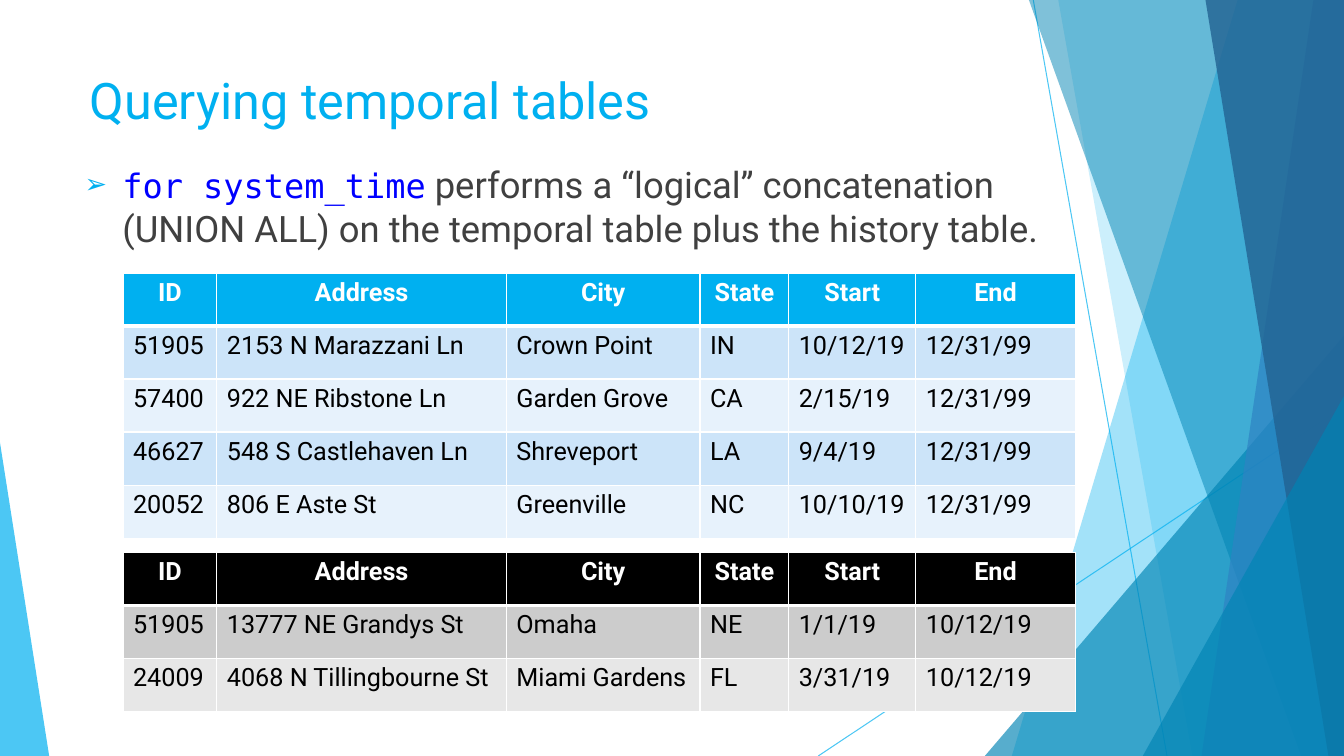
import lxml.etree
import pptx
import pptx.dml.color
import pptx.enum.shapes
import pptx.enum.text
import pptx.oxml
import pptx.oxml.ns
import pptx.util
from pptx.util import Cm

RGBColor = pptx.dml.color.RGBColor
SKY = RGBColor(0x00, 0xB0, 0xF0)
OCEAN = RGBColor(0x00, 0x84, 0xB4)
STEEL = RGBColor(0x2E, 0x83, 0xC3)
NAVY = RGBColor(0x22, 0x62, 0x92)
CODE_BLUE = RGBColor(0x00, 0x00, 0xFF)
BODY_GRAY = RGBColor(0x40, 0x40, 0x40)
WHITE = RGBColor(0xFF, 0xFF, 0xFF)
BLACK = RGBColor(0x00, 0x00, 0x00)
BLUE_BANDS = (RGBColor(0xCC, 0xE4, 0xF9), RGBColor(0xE7, 0xF2, 0xFC))
GRAY_BANDS = (RGBColor(0xCC, 0xCC, 0xCC), RGBColor(0xE7, 0xE7, 0xE7))

TEXT_FONT = "Roboto"
CODE_FONT = "DejaVu Sans Mono"
SLIDE_WIDTH, SLIDE_HEIGHT = 33.87, 19.05  # cm

HEADINGS = ("ID", "Address", "City", "State", "Start", "End")
COLUMN_SHARES = (0.93, 2.87, 1.92, 0.88, 1.26, 1.58)
CURRENT_ROWS = (
    ("51905", "2153 N Marazzani Ln", "Crown Point", "IN", "10/12/19", "12/31/99"),
    ("57400", "922 NE Ribstone Ln", "Garden Grove", "CA", "2/15/19", "12/31/99"),
    ("46627", "548 S Castlehaven Ln", "Shreveport", "LA", "9/4/19", "12/31/99"),
    ("20052", "806 E Aste St", "Greenville", "NC", "10/10/19", "12/31/99"),
)
HISTORY_ROWS = (
    ("51905", "13777 NE Grandys St", "Omaha", "NE", "1/1/19", "10/12/19"),
    ("24009", "4068 N Tillingbourne St", "Miami Gardens", "FL", "3/31/19", "10/12/19"),
)


def add_xml(parent, tag, **attributes):
    child = lxml.etree.SubElement(parent, pptx.oxml.ns.qn(tag))
    for key, value in attributes.items():
        child.set(key, str(value))
    return child


def set_opacity(color_format, percent):
    color = color_format._xFill.find(pptx.oxml.ns.qn("a:srgbClr"))
    add_xml(color, "a:alpha", val=percent * 1000)


def style_facet(facet, color, opacity):
    facet.shadow.inherit = False
    facet.fill.solid()
    facet.fill.fore_color.rgb = color
    set_opacity(facet.fill.fore_color, opacity)
    facet.line.fill.background()


def add_backdrop(slide, left, top, width, height):
    right, bottom = left + width, top + height

    def add_ray(start_x, start_y, end_x, end_y):
        ray = slide.shapes.add_connector(
            pptx.enum.shapes.MSO_CONNECTOR.STRAIGHT,
            Cm(start_x), Cm(start_y), Cm(end_x), Cm(end_y))
        ray.line.color.rgb = SKY
        ray.line.width = pptx.util.Pt(0.75)
        set_opacity(ray.line.fill.fore_color, 70)
        add_xml(ray.element.spPr, "a:effectLst")

    # Panel running from a slanted left edge to the right side
    def add_panel(top_x, bottom_x, color, opacity):
        outline = slide.shapes.build_freeform(Cm(left + top_x), Cm(top))
        outline.add_line_segments([
            (Cm(right), Cm(top)), (Cm(right), Cm(bottom)),
            (Cm(left + bottom_x), Cm(bottom))])
        style_facet(outline.convert_to_shape(), color, opacity)

    # Triangle standing on the bottom edge, apex at one end
    def add_corner(x, corner_width, corner_height, apex, color, opacity):
        corner = slide.shapes.add_shape(
            pptx.enum.shapes.MSO_SHAPE.ISOSCELES_TRIANGLE,
            Cm(x), Cm(bottom - corner_height), Cm(corner_width), Cm(corner_height))
        corner.adjustments[0] = apex
        style_facet(corner, color, opacity)

    add_ray(left + 26.04, top, left + 29.41, bottom)
    add_ray(right, top + 10.24, left + 20.62, bottom)
    add_panel(31.19, 25.5, SKY, 36)
    add_panel(26.67, 30.05, SKY, 20)
    add_corner(right - 9.05, 9.05, 10.59, 1, OCEAN, 66)
    add_panel(25.93, 32.79, OCEAN, 50)
    add_panel(33.1, 30.28, STEEL, 70)
    add_panel(30.38, 33.48, NAVY, 80)
    add_corner(right - 5.07, 5.07, 9.07, 1, OCEAN, 66)
    add_corner(left, 1.24, 7.9, 0, SKY, 70)


def place_placeholder(placeholder, left, top, width, height, anchor):
    placeholder.left, placeholder.top = Cm(left), Cm(top)
    placeholder.width, placeholder.height = Cm(width), Cm(height)
    frame = placeholder.text_frame
    frame.word_wrap = True
    frame.auto_size = pptx.enum.text.MSO_AUTO_SIZE.NONE
    frame.vertical_anchor = anchor
    # Text stays in front of the backdrop
    placeholder.element.getparent().append(placeholder.element)
    return frame.paragraphs[0]


def style_font(font, name, size, color, bold=False):
    font.name, font.size, font.bold = name, pptx.util.Pt(size), bold
    font.color.rgb = color


def fill_title(slide, left, top, width, height):
    heading = place_placeholder(slide.shapes.title, left, top, width, height,
                                pptx.enum.text.MSO_ANCHOR.BOTTOM)
    heading.text = "Querying temporal tables"
    heading.alignment = pptx.enum.text.PP_ALIGN.LEFT
    style_font(heading.font, TEXT_FONT, 36, SKY)


def fill_body(slide, left, top, width, height):
    point = place_placeholder(slide.placeholders[1], left, top, width, height,
                              pptx.enum.text.MSO_ANCHOR.TOP)
    point.space_before = pptx.util.Pt(10)
    clause = point.add_run()
    clause.text = "for system_time"
    style_font(clause.font, CODE_FONT, 24, CODE_BLUE)
    explanation = point.add_run()
    explanation.text = (" performs a “logical” concatenation (UNION ALL) "
                        "on the temporal table plus the history table.")
    style_font(explanation.font, TEXT_FONT, 26, BODY_GRAY)

    # Arrowhead bullet with hanging indent
    properties = point._p.get_or_add_pPr()
    properties.set("marL", str(Cm(0.95)))
    properties.set("indent", str(-Cm(0.95)))
    add_xml(add_xml(properties, "a:buClr"), "a:srgbClr", val=SKY)
    add_xml(properties, "a:buSzPct", val=80000)
    add_xml(properties, "a:buChar", char="➢")


def set_borders(cell, bottom_width):
    properties = cell._tc.get_or_add_tcPr()
    for side, points in (("L", 1), ("R", 1), ("T", 1), ("B", bottom_width)):
        border = add_xml(properties, f"a:ln{side}", w=pptx.util.Pt(points))
        add_xml(add_xml(border, "a:solidFill"), "a:srgbClr", val=WHITE)


def add_address_table(slide, left, top, width, height, records, header_color, bands):
    rows = (HEADINGS, *records)
    table = slide.shapes.add_table(len(rows), len(HEADINGS), Cm(left), Cm(top),
                                   Cm(width), Cm(height)).table
    for column, share in zip(table.columns, COLUMN_SHARES):
        column.width = Cm(width * share / sum(COLUMN_SHARES))
    for row_index, values in enumerate(rows):
        is_header = row_index == 0
        for column_index, value in enumerate(values):
            cell = table.cell(row_index, column_index)
            set_borders(cell, 3 if is_header else 1)
            cell.fill.solid()
            cell.fill.fore_color.rgb = (
                header_color if is_header else bands[(row_index - 1) % 2])
            entry = cell.text_frame.paragraphs[0]
            entry.text = value
            if is_header:
                entry.alignment = pptx.enum.text.PP_ALIGN.CENTER
            style_font(entry.font, TEXT_FONT, 18,
                       WHITE if is_header else BLACK, is_header)


def main():
    presentation = pptx.Presentation()
    presentation.slide_width = Cm(SLIDE_WIDTH)
    presentation.slide_height = Cm(SLIDE_HEIGHT)
    slide = presentation.slides.add_slide(presentation.slide_layouts[1])

    add_backdrop(slide, 0, 0, SLIDE_WIDTH, SLIDE_HEIGHT)
    add_address_table(slide, 3.1, 13.92, 24, 4.01, HISTORY_ROWS, BLACK, GRAY_BANDS)
    fill_title(slide, 2.01, 1.6, 23.88, 1.8)
    add_address_table(slide, 3.1, 6.88, 24, 6.68, CURRENT_ROWS, SKY, BLUE_BANDS)
    fill_body(slide, 1.88, 3.96, 26.16, 13.39)

    presentation.save("out.pptx")


if __name__ == "__main__":
    main()
